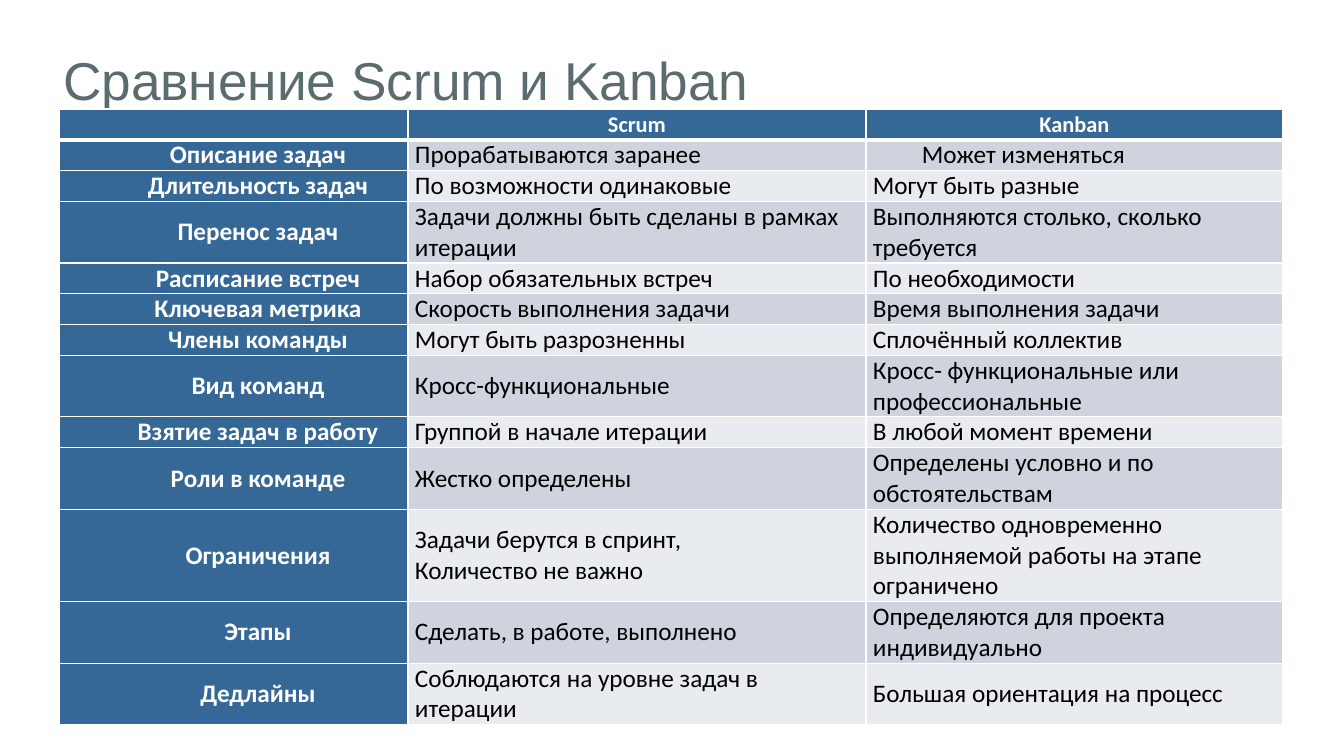
import pptx
import pptx.util
import pptx.dml.color
import pptx.enum.text
import pptx.oxml

TITLE = "Сравнение Scrum и Kanban"
ROWS = [
    ("", "Scrum", "Kanban"),
    ("Описание задач", "Прорабатываются заранее", "Может изменяться"),
    ("Длительность задач", "По возможности одинаковые", "Могут быть разные"),
    ("Перенос задач", "Задачи должны быть сделаны в рамках итерации",
     "Выполняются столько, сколько требуется"),
    ("Расписание встреч", "Набор обязательных встреч", "По необходимости"),
    ("Ключевая метрика", "Скорость выполнения задачи", "Время выполнения задачи"),
    ("Члены команды", "Могут быть разрозненны", "Сплочённый коллектив"),
    ("Вид команд", "Кросс-функциональные", "Кросс- функциональные или профессиональные"),
    ("Взятие задач в работу", "Группой в начале итерации", "В любой момент времени"),
    ("Роли в команде", "Жестко определены", "Определены условно и по обстоятельствам"),
    ("Ограничения", "Задачи берутся в спринт,\nКоличество не важно",
     "Количество одновременно выполняемой работы на этапе ограничено"),
    ("Этапы", "Сделать, в работе, выполнено", "Определяются для проекта индивидуально"),
    ("Дедлайны", "Соблюдаются на уровне задач в итерации", "Большая ориентация на процесс"),
]
ROW_LINES = [1, 1, 1, 2, 1, 1, 1, 2, 1, 2, 3, 2, 2]
COLUMN_WIDTHS = [349, 458, 417]
LINE_HEIGHT = 30
INDENTED_CELL = (1, 2)
BLUE, WHITE, BLACK, GREY = "356797", "FFFFFF", "000000", "5A6C6E"
BANDS = ["E8EBEF", "CED3DD"]


def px(length):
    return pptx.util.Emu(round(length * 914400 / 100.8))


def rgb(value):
    return pptx.dml.color.RGBColor.from_string(value)


def write(frame, text, size, color, font="Calibri", bold=False, centred=False, indent=0):
    align = pptx.enum.text.PP_ALIGN
    for number, line in enumerate(text.split("\n")):
        para = frame.paragraphs[0] if number == 0 else frame.add_paragraph()
        para.alignment = align.CENTER if centred else align.LEFT
        if indent:
            properties = para._p.get_or_add_pPr()
            properties.set("marL", "0")
            properties.set("indent", str(px(indent)))
        para.font.size = pptx.util.Pt(size)
        if line:
            span = para.add_run()
            span.text = line
            span.font.name = font
            span.font.size = pptx.util.Pt(size)
            span.font.bold = bold
            span.font.color.rgb = rgb(color)


def add_borders(cell, top, bottom):
    for side, points in (("L", 1), ("R", 1), ("T", top), ("B", bottom)):
        cell._tc.get_or_add_tcPr().append(pptx.oxml.parse_xml(
            f'<a:ln{side} xmlns:a="http://schemas.openxmlformats.org/drawingml/2006/main" '
            f'w="{pptx.util.Pt(points)}"><a:solidFill><a:srgbClr val="{WHITE}"/>'
            f'</a:solidFill></a:ln{side}>'))


def add_title(page):
    title = page.shapes.title
    title.left, title.top, title.width, title.height = map(px, (59, 39, 1224, 80))
    frame = title.text_frame
    frame.word_wrap = True
    frame.auto_size = pptx.enum.text.MSO_AUTO_SIZE.NONE
    frame.vertical_anchor = pptx.enum.text.MSO_ANCHOR.MIDDLE
    frame.margin_left = frame.margin_right = px(4)
    frame.margin_top = frame.margin_bottom = px(2)
    write(frame, TITLE, 38, GREY, font="Arial")


def add_comparison(page):
    heights = [lines * LINE_HEIGHT for lines in ROW_LINES]
    table = page.shapes.add_table(
        len(ROWS), len(COLUMN_WIDTHS), px(59), px(109),
        px(sum(COLUMN_WIDTHS)), px(sum(heights))).table
    for column, width in zip(table.columns, COLUMN_WIDTHS):
        column.width = px(width)
    for i, texts in enumerate(ROWS):
        table.rows[i].height = px(heights[i])
        for j, text in enumerate(texts):
            cell = table.cell(i, j)
            heading = i == 0 or j == 0
            cell.vertical_anchor = pptx.enum.text.MSO_ANCHOR.MIDDLE
            cell.margin_left = cell.margin_right = px(7)
            cell.margin_top = cell.margin_bottom = 0
            add_borders(cell, 3 if i == 1 else 1, 3 if i == 0 else 1)
            cell.fill.solid()
            cell.fill.fore_color.rgb = rgb(BLUE if heading else BANDS[i % 2])
            indented = (i > 0 and j == 0) or (i, j) == INDENTED_CELL
            write(cell.text_frame, text, 16 if i == 0 and j else 18,
                  WHITE if heading else BLACK, bold=heading, centred=heading,
                  indent=49 if indented else 0)


def main():
    deck = pptx.Presentation()
    deck.slide_width, deck.slide_height = px(1344), px(756)
    page = deck.slides.add_slide(deck.slide_layouts[5])
    add_title(page)
    add_comparison(page)
    deck.save("out.pptx")


if __name__ == "__main__":
    main()
